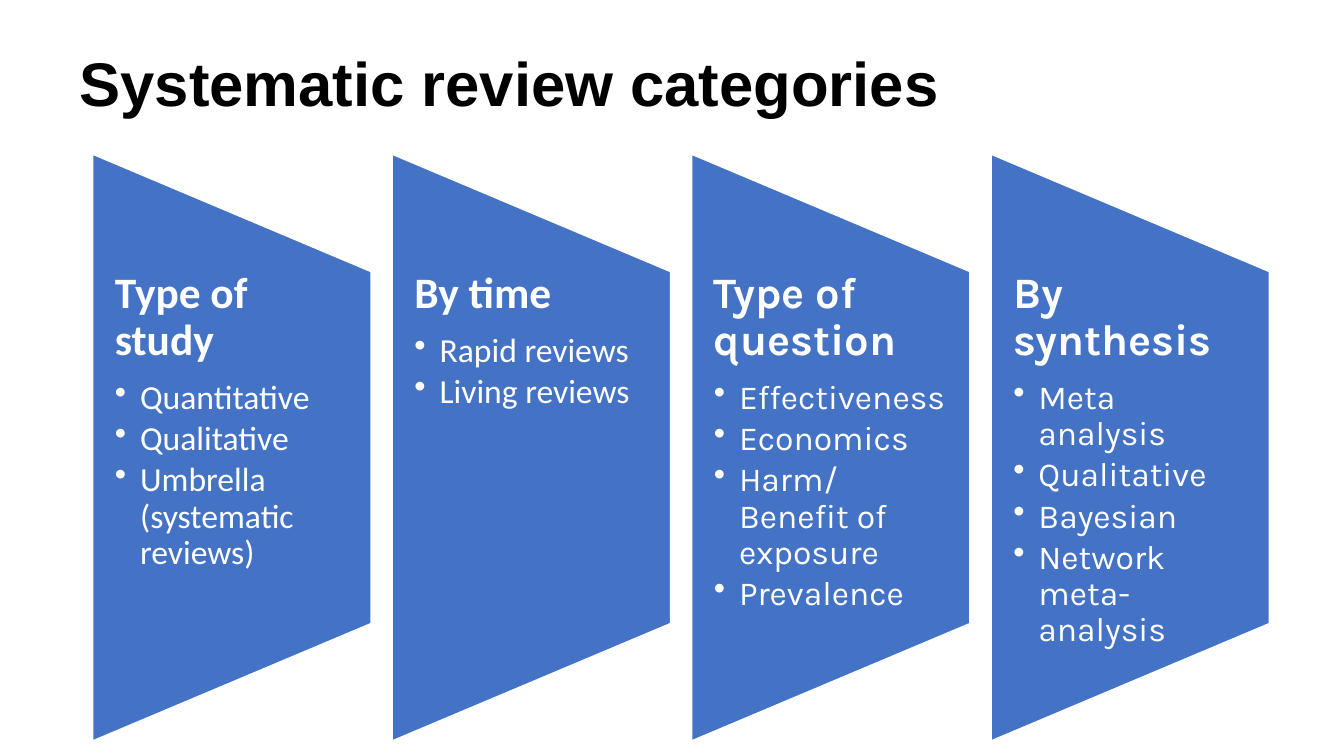
from lxml import etree
from pptx import Presentation
from pptx.dml.color import RGBColor
from pptx.enum.shapes import MSO_SHAPE
from pptx.enum.text import MSO_ANCHOR
from pptx.oxml.ns import qn
from pptx.util import Pt

PANEL = MSO_SHAPE.FLOWCHART_MANUAL_OPERATION
TOP, BOTTOM = MSO_ANCHOR.TOP, MSO_ANCHOR.BOTTOM
PX = 9144  # 100 px to the inch
BLUE, WHITE, BLACK = "4472C4", "FFFFFF", "000000"

# Panel grid
LEFT, HEAD, STEP = 92, 153, 297
WIDTH, HEIGHT = 276, 582

GROUPS = [
    ("Type of study", "Calibri",
     ["Quantitative", "Qualitative", "Umbrella (systematic reviews)"]),
    ("By time", "Calibri", ["Rapid reviews", "Living reviews"]),
    ("Type of question", "Karla",
     ["Effectiveness", "Economics", "Harm/Benefit of exposure", "Prevalence"]),
    ("By synthesis", "Karla",
     ["Meta analysis", "Qualitative", "Bayesian", "Network meta-analysis"]),
]


def px(n):
    return round(n * PX)


def color(code):
    return RGBColor.from_string(code)


def add_box(slide, x, y, w, h, side, edge, anchor):
    box = slide.shapes.add_textbox(px(x), px(y), px(w), px(h))
    frame = box.text_frame
    frame.word_wrap = True
    frame.vertical_anchor = anchor
    frame.margin_left = frame.margin_right = px(side)
    frame.margin_top = frame.margin_bottom = px(edge)
    return frame


def style(para, text, face, size, code, bold=False, after=0):
    para.text = text
    para.line_spacing = 0.9
    para.space_after = Pt(after)
    font = para.font
    font.name, font.size, font.bold = face, Pt(size), bold
    font.color.rgb = color(code)


def add_bullet(para):
    props = para._p.get_or_add_pPr()
    props.set("marL", str(px(25)))
    props.set("indent", str(px(-25)))
    mark = etree.Element(qn("a:buChar"), char="•")
    # Bullets come before the default run properties
    props.find(qn("a:defRPr")).addprevious(mark)


def add_panel(slide, x):
    # The shape lies flat before its quarter turn
    shift = (HEIGHT - WIDTH) / 2
    shape = slide.shapes.add_shape(
        PANEL, px(x - shift), px(HEAD + shift), px(HEIGHT), px(WIDTH))
    shape.rotation = 270
    shape.shadow.inherit = False
    shape.fill.solid()
    shape.fill.fore_color.rgb = color(BLUE)
    shape.line.color.rgb = color(WHITE)
    shape.line.width = Pt(1)


def add_list(slide, x, name, face, items):
    frame = add_box(slide, x, 269, WIDTH, 349, 22, 0, TOP)
    style(frame.paragraphs[0], name, face, 31, WHITE, True, 11)
    for item in items:
        para = frame.add_paragraph()
        style(para, item, face, 24, WHITE, after=3.5)
        add_bullet(para)


def main():
    deck = Presentation()
    deck.slide_width, deck.slide_height = px(1333), px(750)
    slide = deck.slides.add_slide(deck.slide_layouts[6])

    # Title
    title = add_box(slide, 69, 13, 1250, 111, 10, 5, BOTTOM)
    style(title.paragraphs[0], "Systematic review categories",
          "Arial", 44, BLACK, True)

    # Category panels
    for i, (name, face, items) in enumerate(GROUPS):
        x = LEFT + i * STEP
        add_panel(slide, x)
        add_list(slide, x, name, face, items)

    deck.save("out.pptx")


if __name__ == "__main__":
    main()
